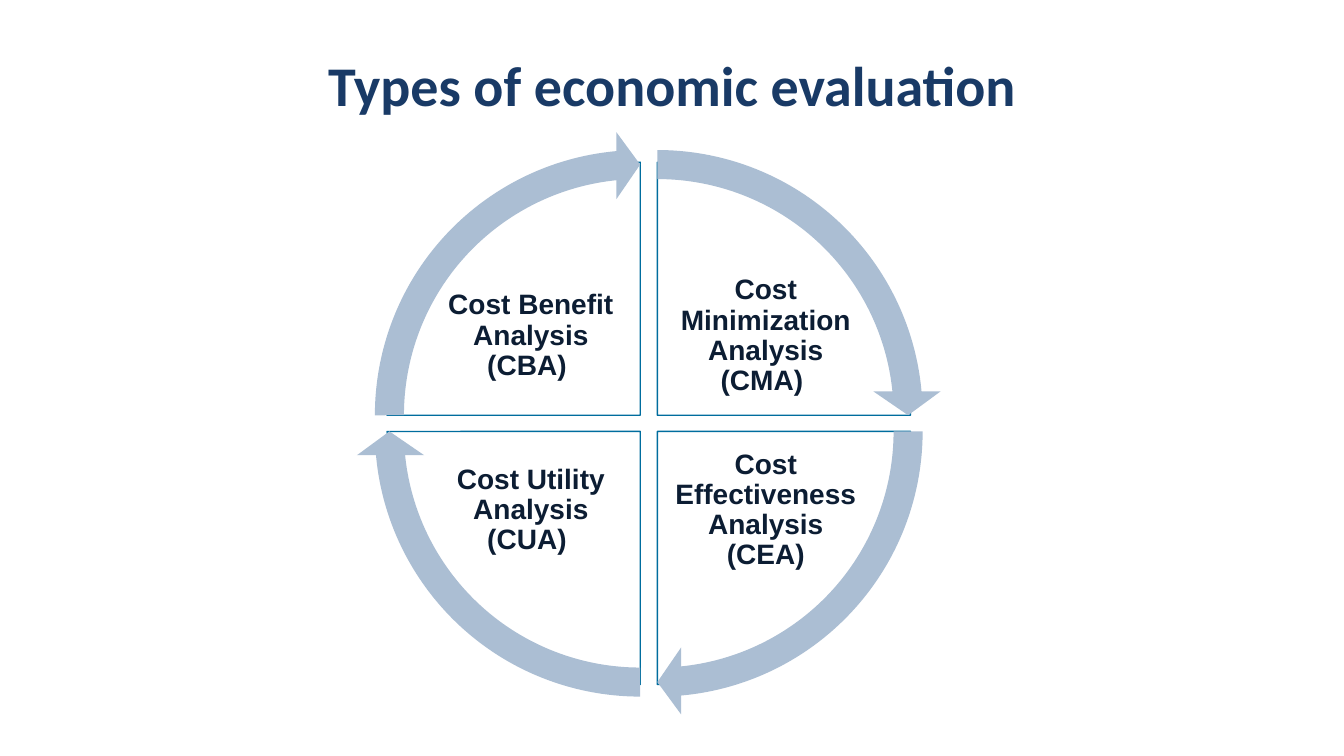
from pptx import Presentation
from pptx.dml.color import RGBColor
from pptx.enum import shapes, text
from pptx.util import Inches, Pt

TITLE = "Types of economic evaluation"
# wording, column (0 left, 1 right), row (0 top, 1 bottom), start angle in degrees
QUADRANTS = [
    ("Cost Minimization Analysis (CMA) ", 1, 0, 270),
    ("Cost Effectiveness Analysis (CEA)", 1, 1, 0),
    ("Cost Utility Analysis (CUA) ", 0, 1, 90),
    ("Cost Benefit Analysis (CBA) ", 0, 0, 180),
]

WHITE = RGBColor(0xFF, 0xFF, 0xFF)
OUTLINE = RGBColor(0x00, 0x6D, 0x9E)
ARROW = RGBColor(0xAB, 0xBE, 0xD3)
LABEL = RGBColor(0x0C, 0x1D, 0x33)
HEADING = RGBColor(0x19, 0x3A, 0x66)

CENTER_X, CENTER_Y = (6.35, 6.52), (4.12, 4.28)
PIE_SIZE, ARROW_SIZE = 5.02, 5.64
LABEL_X, LABEL_Y = (4.34, 6.67), (2.65, 4.38)
LABEL_WIDTH, LABEL_HEIGHT = 1.85, 1.37
LABEL_INSET_X, LABEL_INSET_Y = 0.01, 0.03
ANGLE_UNIT = 0.6  # adjustment value of one degree
HEAD_ANGLE = 3.275


def add_round(kind, column, row, size, fill, adjustments):
    """Add a shape of the given size around the centre of its quadrant."""
    part = slide.shapes.add_shape(
        kind, Inches(CENTER_X[column] - size / 2),
        Inches(CENTER_Y[row] - size / 2), Inches(size), Inches(size))
    part.shadow.inherit = False
    part.fill.solid()
    part.fill.fore_color.rgb = fill
    part.line.fill.background()
    for index, value in enumerate(adjustments):
        part.adjustments[index] = value
    return part


def add_label(words, left, top, width, height, insets, anchor, font_name, size, color):
    box = slide.shapes.add_textbox(
        Inches(left), Inches(top), Inches(width), Inches(height))
    frame = box.text_frame
    frame.word_wrap = True
    frame.vertical_anchor = anchor
    frame.margin_left = frame.margin_right = Inches(insets[0])
    frame.margin_top = frame.margin_bottom = Inches(insets[1])
    paragraph = frame.paragraphs[0]
    paragraph.text = words
    paragraph.alignment = text.PP_ALIGN.CENTER
    paragraph.line_spacing = 0.9
    paragraph.font.name = font_name
    paragraph.font.size = Pt(size)
    paragraph.font.bold = True
    paragraph.font.color.rgb = color


prs = Presentation()
prs.slide_width, prs.slide_height = Inches(13.33), Inches(7.5)
slide = prs.slides.add_slide(prs.slide_layouts[6])

for words, column, row, degrees in QUADRANTS:
    start, end = degrees * ANGLE_UNIT, (degrees + 90) % 360 * ANGLE_UNIT
    pie = add_round(shapes.MSO_SHAPE.PIE, column, row, PIE_SIZE, WHITE, (start, end))
    pie.line.color.rgb = OUTLINE
    pie.line.width = Pt(1)
    add_label(words, LABEL_X[column], LABEL_Y[row], LABEL_WIDTH, LABEL_HEIGHT,
              (LABEL_INSET_X, LABEL_INSET_Y), text.MSO_ANCHOR.MIDDLE,
              "Arial", 20, LABEL)

for _, column, row, degrees in QUADRANTS:
    start = degrees * ANGLE_UNIT
    head = start + 90 * ANGLE_UNIT - HEAD_ANGLE
    add_round(shapes.MSO_SHAPE.CIRCULAR_ARROW, column, row, ARROW_SIZE, ARROW,
              (0.051, HEAD_ANGLE, head, start, 0.059))

add_label(TITLE, 0, 0.58, 13.33, 1.25, (0, 0), text.MSO_ANCHOR.TOP,
          "Calibri", 40, HEADING)

prs.save("out.pptx")
